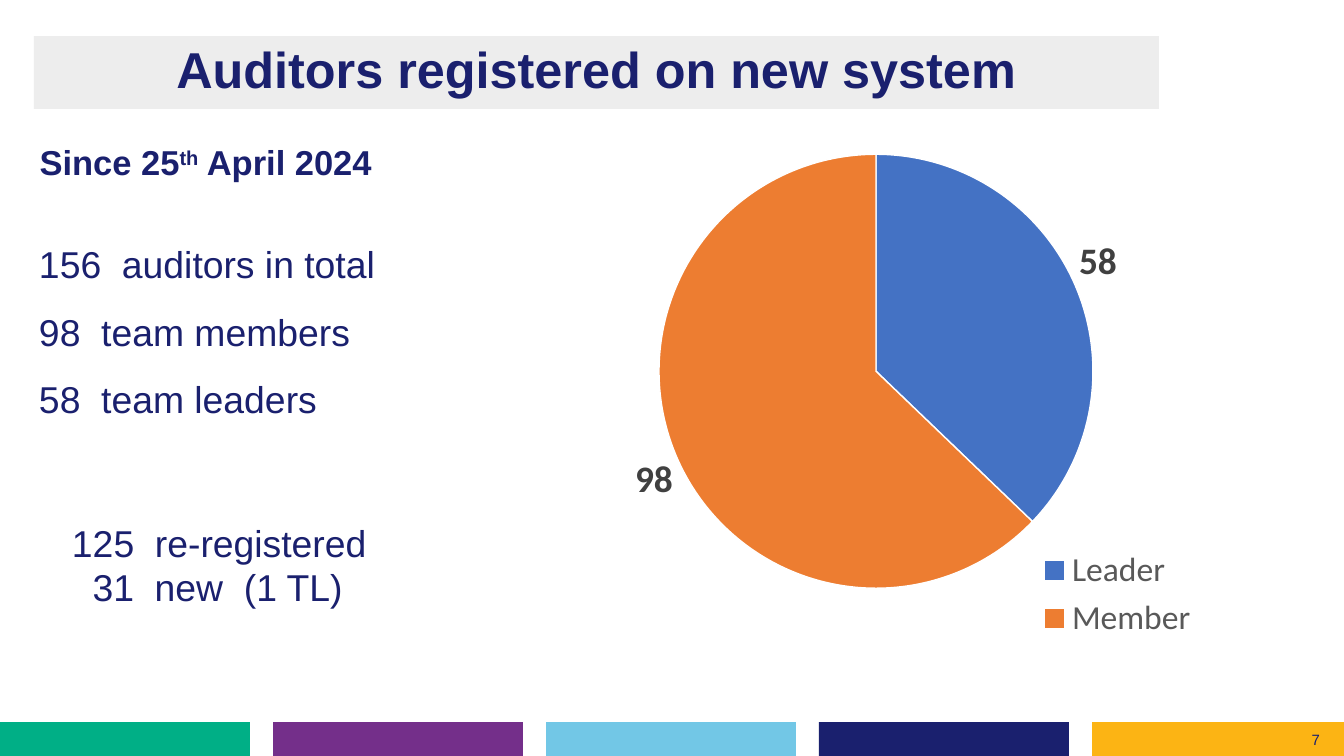
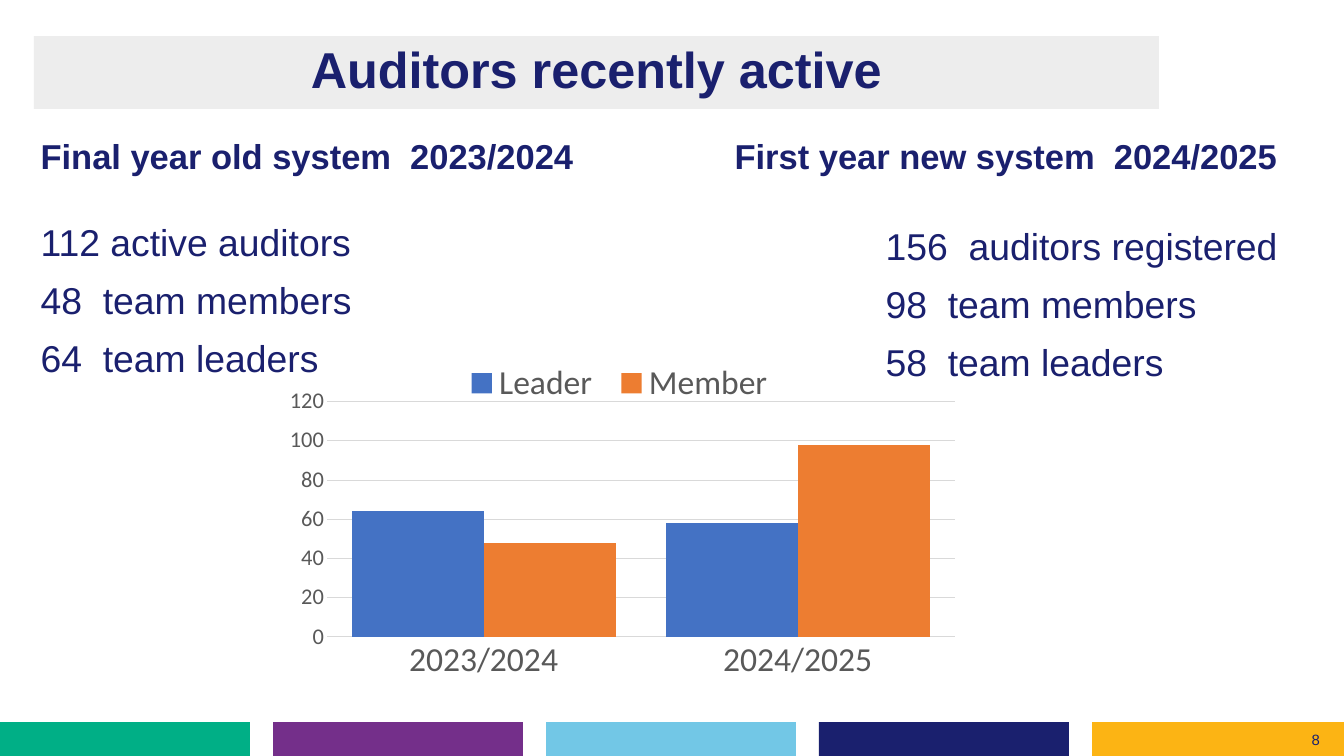
from lxml.etree import SubElement
from pptx import Presentation
from pptx.chart.data import CategoryChartData
from pptx.dml.color import RGBColor
from pptx.enum.chart import XL_CHART_TYPE, XL_LABEL_POSITION, XL_LEGEND_POSITION, XL_TICK_MARK
from pptx.enum.shapes import MSO_SHAPE
from pptx.enum.text import MSO_ANCHOR, PP_ALIGN
from pptx.oxml import parse_xml
from pptx.oxml.ns import nsdecls, qn
from pptx.util import Pt

EMU_PER_PX = 914400 / 67.2
PAGE_WIDTH, PAGE_HEIGHT = 1344, 756
BAND_TOP, BAND_WIDTH, BAND_STEP = 722, 250, 273
TEXT_FONT, CHART_FONT = "Arial", "Calibri"
HEADING_SIZE, BODY_SIZE = 37, 40

COLORS = {
    "green": "00AF86",
    "purple": "742F8A",
    "sky": "72C7E6",
    "navy": "1A206E",
    "yellow": "FCB414",
    "title_band": "EDEDED",
    "leader": "4472C4",
    "member": "ED7D31",
    "chart_text": "595959",
    "label": "404040",
    "grid": "D9D9D9",
    "white": "FFFFFF",
}
BANDS = ["green", "purple", "sky", "navy", "yellow"]
ROLES = {"Leader": "leader", "Member": "member"}


def color(name):
    return RGBColor.from_string(COLORS[name])


def px(*lengths):
    return [round(length * EMU_PER_PX) for length in lengths]


def set_font(font, name, size, color_name, bold=False):
    font.name = name
    font.size = Pt(size)
    font.bold = bold
    font.color.rgb = color(color_name)


def add_rectangle(page, area, fill):
    box = page.shapes.add_shape(MSO_SHAPE.RECTANGLE, *px(*area))
    box.shadow.inherit = False
    box.fill.solid()
    box.fill.fore_color.rgb = color(fill)
    box.line.fill.background()
    return box


def add_text(page, area, lines, size=BODY_SIZE, bold=False, spacing=1.0,
             anchor=MSO_ANCHOR.MIDDLE, tight=False):
    box = page.shapes.add_textbox(*px(*area))
    frame = box.text_frame
    frame.word_wrap = True
    frame.vertical_anchor = anchor
    if tight:
        frame.margin_left, frame.margin_right = px(5, 5)
        frame.margin_top, frame.margin_bottom = px(3, 3)
    for index, line in enumerate(lines):
        para = frame.add_paragraph() if index else frame.paragraphs[0]
        para.text = line
        para.line_spacing = spacing
        set_font(para.font, TEXT_FONT, size, "navy", bold)
    return box


def add_heading(page, area, text, spacing):
    return add_text(page, area, [text], HEADING_SIZE, True, spacing)


def add_page(deck, title, number):
    page = deck.slides.add_slide(deck.slide_layouts[6])
    for index, fill in enumerate(BANDS):
        left = index * BAND_STEP
        width = min(BAND_WIDTH, PAGE_WIDTH - left)
        if index == len(BANDS) - 1:
            width = PAGE_WIDTH - left
        add_rectangle(page, (left, BAND_TOP, width, PAGE_HEIGHT - BAND_TOP), fill)
    add_text(page, (1305, 727, 36, 26), [str(number)], 16, anchor=MSO_ANCHOR.TOP)
    band = add_rectangle(page, (34, 36, 1125, 73), "title_band")
    band.text_frame.vertical_anchor = MSO_ANCHOR.MIDDLE
    para = band.text_frame.paragraphs[0]
    para.text = title
    para.alignment = PP_ALIGN.CENTER
    para.line_spacing = 0.9
    set_font(para.font, TEXT_FONT, 54, "navy", True)
    return page


def set_layout(element, index, bounds, inner=False):
    for old in element.findall(qn("c:layout")):
        element.remove(old)
    layout = parse_xml(f"<c:layout {nsdecls('c')}><c:manualLayout/></c:layout>")
    manual = layout[0]
    settings = {"layoutTarget": "inner"} if inner else {}
    settings.update(xMode="edge", yMode="edge")
    settings.update(zip("xywh", bounds))
    for tag, value in settings.items():
        SubElement(manual, qn(f"c:{tag}")).set("val", str(value))
    element.insert(index, layout)


def add_chart(page, kind, area, categories, series, plot_bounds, legend_bounds):
    data = CategoryChartData(number_format="0")
    data.categories = categories
    for name, values in series.items():
        data.add_series(name, values)
    chart = page.shapes.add_chart(kind, *px(*area), data).chart
    chart.has_title = False
    chart.font.name = CHART_FONT
    chart.font.size = Pt(10)
    chart.has_legend = True
    legend = chart.legend
    legend.position = XL_LEGEND_POSITION.BOTTOM
    legend.include_in_layout = False
    set_font(legend.font, CHART_FONT, 36, "chart_text")
    set_layout(legend._element, 1, legend_bounds)
    set_layout(chart._chartSpace.chart.plotArea, 0, plot_bounds, True)
    return chart


def add_role_pie(page):
    chart = add_chart(page, XL_CHART_TYPE.PIE, (526, 143, 700, 513), list(ROLES),
                      {"Series 1": [58, 98]}, (0.19, 0.02, 0.62, 0.85),
                      (0.73, 0.78, 0.23, 0.2))
    plot = chart.plots[0]
    plot.vary_by_categories = True
    for index, role in enumerate(ROLES.values()):
        slice_format = plot.series[0].points[index].format
        slice_format.fill.solid()
        slice_format.fill.fore_color.rgb = color(role)
        slice_format.line.color.rgb = color("white")
        slice_format.line.width = Pt(1.5)
    labels = plot.series[0].data_labels
    labels.show_value = True
    labels.number_format = "0"
    labels.number_format_is_linked = False
    labels.position = XL_LABEL_POSITION.OUTSIDE_END
    set_font(labels.font, CHART_FONT, 40, "label", True)


def style_axis(axis, size):
    axis.major_tick_mark = XL_TICK_MARK.NONE
    axis.minor_tick_mark = XL_TICK_MARK.NONE
    axis.format.line.fill.background()
    set_font(axis.tick_labels.font, CHART_FONT, size, "chart_text")


def add_year_columns(page):
    chart = add_chart(page, XL_CHART_TYPE.COLUMN_CLUSTERED, (263, 333, 706, 370),
                      ["2023/2024", "2024/2025"],
                      {"Leader": [64, 58], "Member": [48, 98]},
                      (0.09, 0.185, 0.89, 0.636), (0.27, 0.08, 0.47, 0.11))
    plot = chart.plots[0]
    plot.vary_by_categories = False
    plot.gap_width = 38
    plot.overlap = 0
    for series in plot.series:
        series.format.fill.solid()
        series.format.fill.fore_color.rgb = color(ROLES[series.name])
    style_axis(chart.category_axis, 36)
    values = chart.value_axis
    style_axis(values, 24)
    values.minimum_scale, values.maximum_scale, values.major_unit = 0, 120, 20
    values.tick_labels.number_format = "0"
    values.tick_labels.number_format_is_linked = False
    values.major_gridlines.format.line.color.rgb = color("grid")
    values.major_gridlines.format.line.width = Pt(0.75)


def add_registered_page(deck):
    page = add_page(deck, "Auditors registered on new system", 7)
    status = add_text(page, (67, 473, 398, 183), ["125  re-registered", "31  new  (1 TL)"],
                      tight=True)
    new_auditors = status.text_frame.paragraphs[1]
    new_auditors._p.get_or_add_pPr().set("marL", str(Pt(22)))
    add_text(page, (34, 198, 498, 244),
             ["156  auditors in total", "98  team members", "58  team leaders"],
             spacing=1.5, tight=True)
    add_role_pie(page)
    since = add_heading(page, (33, 123, 471, 61), "Since 25", 1.4)
    para = since.text_frame.paragraphs[0]
    ordinal = para.add_run()
    ordinal.text = "th"
    ordinal.font._element.set("baseline", "30000")
    para.add_run().text = " April 2024"


def add_active_page(deck):
    page = add_page(deck, "Auditors recently active", 8)
    add_text(page, (34, 200, 478, 186),
             ["112 active auditors", "48  team members", "64  team leaders"], spacing=1.3)
    add_text(page, (879, 204, 442, 186),
             ["156  auditors registered", "98  team members", "58  team leaders"], spacing=1.3)
    add_heading(page, (34, 123, 583, 61), "Final year old system  2023/2024", 1.1)
    add_heading(page, (728, 123, 583, 61), "First year new system  2024/2025", 1.1)
    add_year_columns(page)


def main():
    deck = Presentation()
    deck.slide_width, deck.slide_height = px(PAGE_WIDTH, PAGE_HEIGHT)
    add_registered_page(deck)
    add_active_page(deck)
    deck.save("out.pptx")


if __name__ == "__main__":
    main()
